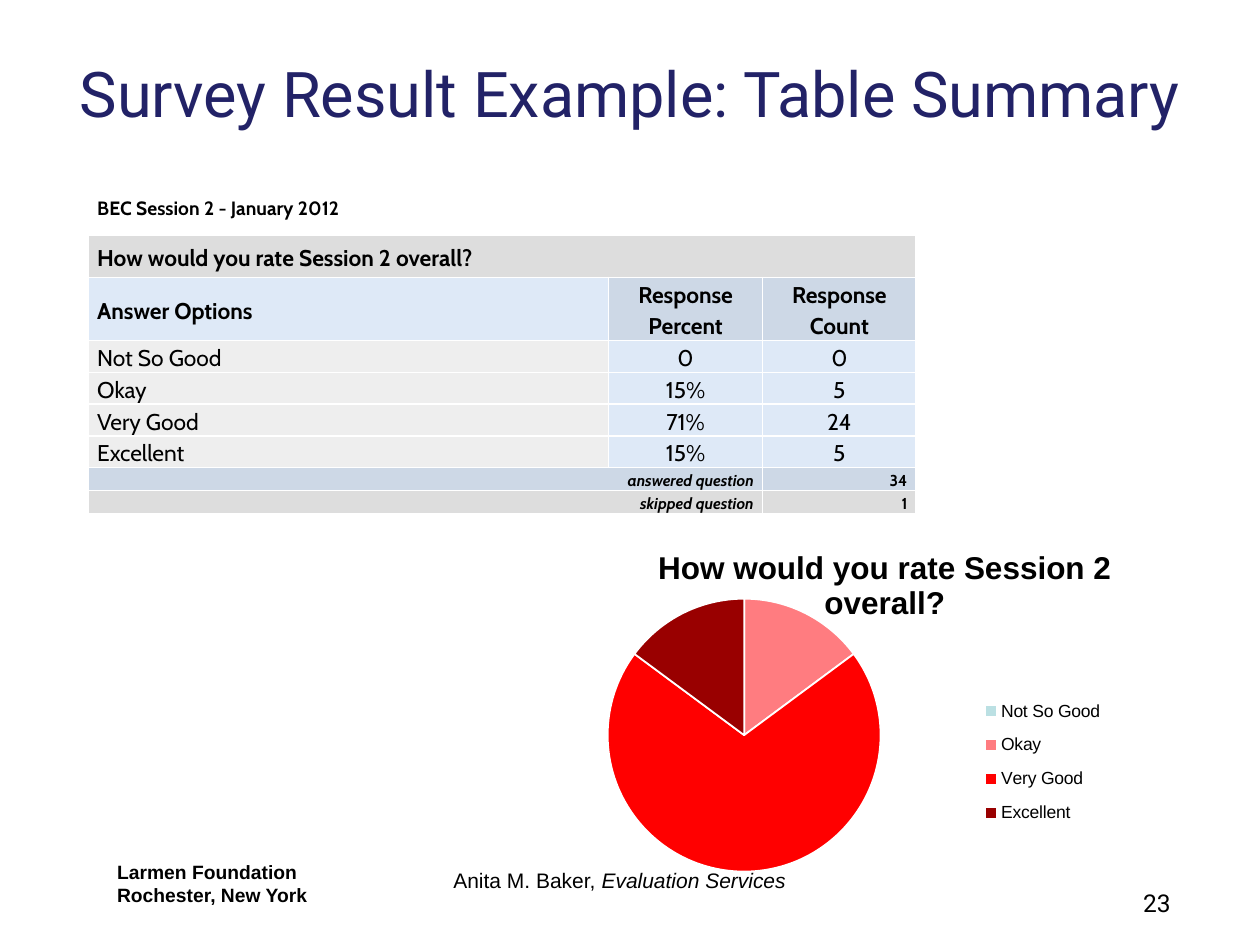
from pptx import Presentation
from pptx.chart.data import CategoryChartData
from pptx.dml.color import RGBColor
from pptx.enum.chart import XL_CHART_TYPE, XL_LEGEND_POSITION
from pptx.enum.text import MSO_ANCHOR, PP_ALIGN
from pptx.oxml import parse_xml
from pptx.oxml.ns import nsdecls
from pptx.util import Cm, Pt

LEFT, MID, RIGHT = PP_ALIGN.LEFT, PP_ALIGN.CENTER, PP_ALIGN.RIGHT
CENTRE, BASE = MSO_ANCHOR.MIDDLE, MSO_ANCHOR.BOTTOM
PIE = XL_CHART_TYPE.PIE
SIDE = XL_LEGEND_POSITION.RIGHT

HUES = {
    "navy": "222267", "black": "000000", "white": "FFFFFF",
    "grey": "DDDDDD", "pale": "EEEEEE", "sky": "DEE9F7", "steel": "CDD8E6",
    "ice": "BBE0E3", "pink": "FF7C80", "red": "FF0000", "wine": "990000",
}
ASK = "How would you rate Session 2 overall?"
VOTES = [
    ("Not So Good", 0, "0", "0", "ice"),
    ("Okay", 15, "15%", "5", "pink"),
    ("Very Good", 71, "71%", "24", "red"),
    ("Excellent", 15, "15%", "5", "wine"),
]
TOTALS = [("answered question", "34", "steel"), ("skipped question", "1", "grey")]
WIDTHS = [10.49, 3.1, 3.1]
HEIGHTS = [1.17, 0.84, 1.27] + [0.64] * len(VOTES) + [0.46] * len(TOTALS)


def hue(name):
    """Return the named colour."""
    return RGBColor.from_string(HUES[name])


class Deck:
    """Hold the style and the current slide."""

    def __init__(self):
        """Open a deck with one title-only slide."""
        self.prs = Presentation()
        self.prs.slide_width, self.prs.slide_height = Cm(25.4), Cm(19.05)
        self.slide = self.prs.slides.add_slide(self.prs.slide_layouts[5])
        self.head, self.body, self.sheet = "Roboto", "Arial", "Cabin"

    def style(self, font, face, size, tone="black", bold=False, slant=False):
        """Format a font."""
        font.name, font.size, font.bold, font.italic = face, Pt(size), bold, slant
        font.color.rgb = hue(tone)

    def run(self, para, text, *look, **more):
        """Add one formatted run."""
        run = para.add_run()
        run.text = text
        self.style(run.font, *look, **more)

    def title(self, text, box):
        """Place and fill the title."""
        shape = self.slide.shapes.title
        shape.left, shape.top, shape.width, shape.height = map(Cm, box)
        shape.text_frame.vertical_anchor = BASE
        para = shape.text_frame.paragraphs[0]
        para.alignment = MID
        self.run(para, text, self.head, 36, "navy")

    def note(self, box, lines, face, size, align=LEFT, bold=False):
        """Add a text box from lines of (text, slant) runs."""
        frame = self.slide.shapes.add_textbox(*map(Cm, box)).text_frame
        frame.word_wrap = True
        for i, line in enumerate(lines):
            para = frame.add_paragraph() if i else frame.paragraphs[0]
            para.alignment = align
            for text, slant in line:
                self.run(para, text, face, size, bold=bold, slant=slant)

    def grid(self, box, widths, heights):
        """Add a plain table."""
        table = self.slide.shapes.add_table(
            len(heights), len(widths), *map(Cm, box)).table
        table.first_row = table.horz_banding = False
        for col, width in zip(table.columns, widths):
            col.width = Cm(width)
        for row, height in zip(table.rows, heights):
            row.height = Cm(height)
        return table

    def cell(self, table, row, col, text, tone, size=13, align=LEFT,
             anchor=CENTRE, span=1, **more):
        """Fill one cell, merged over span columns."""
        cell = table.cell(row, col)
        if span > 1:
            cell.merge(table.cell(row, col + span - 1))
        cell.fill.solid()
        cell.fill.fore_color.rgb = hue(tone)
        cell.margin_left = cell.margin_right = Cm(0.18)
        cell.margin_top = cell.margin_bottom = 0
        cell.vertical_anchor = anchor
        para = cell.text_frame.paragraphs[0]
        para.alignment, para.line_spacing = align, 1.15
        self.run(para, text, self.sheet, size, **more)

    def place(self, chart, part, spot, inner=False):
        """Set a manual layout just before a chart part."""
        mark = chart.element.xpath("c:chart//" + part)[0]
        for old in mark.getparent().xpath("c:layout"):
            mark.getparent().remove(old)
        tags = ["xMode", "yMode", "x", "y", "w", "h"]
        rows = zip(tags, ["edge", "edge", *spot])
        items = "".join(f'<c:{tag} val="{val}"/>' for tag, val in rows)
        goal = '<c:layoutTarget val="inner"/>' if inner else ""
        mark.addprevious(parse_xml(
            f'<c:layout {nsdecls("c")}><c:manualLayout>{goal}{items}'
            "</c:manualLayout></c:layout>"))

    def pie(self, box, text, votes):
        """Add a pie chart with title and legend."""
        data = CategoryChartData()
        data.categories = [vote[0] for vote in votes]
        data.add_series("Series 1", [vote[1] for vote in votes])
        chart = self.slide.shapes.add_chart(PIE, *map(Cm, box), data).chart
        self.style(chart.font, self.body, 10)
        chart.has_title = chart.has_legend = True
        para = chart.chart_title.text_frame.paragraphs[0]
        para.alignment = MID
        self.run(para, text, self.body, 18, bold=True)
        chart.legend.position = SIDE
        chart.legend.include_in_layout = False
        self.style(chart.legend.font, self.body, 10)
        plot = chart.plots[0]
        plot.vary_by_categories = True
        for i, vote in enumerate(votes):
            form = plot.series[0].points[i].format
            form.fill.solid()
            form.fill.fore_color.rgb = hue(vote[-1])
            form.line.color.rgb = hue("white")
            form.line.width = Pt(1)
        self.place(chart, "c:title/c:overlay", (0.28, 0.05))
        self.place(chart, "c:legend/c:overlay", (0.72, 0.43, 0.27, 0.39))
        self.place(chart, "c:plotArea/c:pieChart", (0.2, 0.2, 0.43, 0.71), True)


def main():
    """Build the survey slide."""
    deck = Deck()
    deck.title("Survey Result Example: Table Summary", (0, 0.64, 25.4, 2.11))

    table = deck.grid((1.78, 3.58, sum(WIDTHS), sum(HEIGHTS)), WIDTHS, HEIGHTS)
    deck.cell(table, 0, 0, "BEC Session 2 - January 2012", "white", 11,
              span=3, bold=True)
    deck.cell(table, 1, 0, ASK, "grey", span=3, bold=True)
    deck.cell(table, 2, 0, "Answer Options", "sky", bold=True)
    for col, text in enumerate(["Response Percent", "Response Count"], 1):
        deck.cell(table, 2, col, text, "steel", align=MID, bold=True)
    for row, (name, _, share, count, _) in enumerate(VOTES, 3):
        deck.cell(table, row, 0, name, "pale", anchor=BASE)
        for col, text in enumerate([share, count], 1):
            deck.cell(table, row, col, text, "sky", align=MID)
    for row, (name, count, tone) in enumerate(TOTALS, 3 + len(VOTES)):
        deck.cell(table, row, 0, name, tone, 9, RIGHT, BASE, 2,
                  bold=True, slant=True)
        deck.cell(table, row, 2, count, tone, 9, RIGHT, BASE, bold=True)

    deck.pie((9.32, 10.52, 13.69, 7.75), ASK, VOTES)
    deck.note((2.11, 17.22, 5.28, 1.19),
              [[("Larmen Foundation", False)], [("Rochester, New York", False)]],
              deck.body, 11, bold=True)
    deck.note((8.89, 17.37, 8.05, 1.45),
              [[("Anita M. Baker, ", False), ("Evaluation Services", True)]],
              deck.body, 12)
    deck.note((22.45, 17.78, 1.4, 1.32), [[("23", False)]], deck.head, 14, RIGHT)
    deck.prs.save("out.pptx")


if __name__ == "__main__":
    main()
